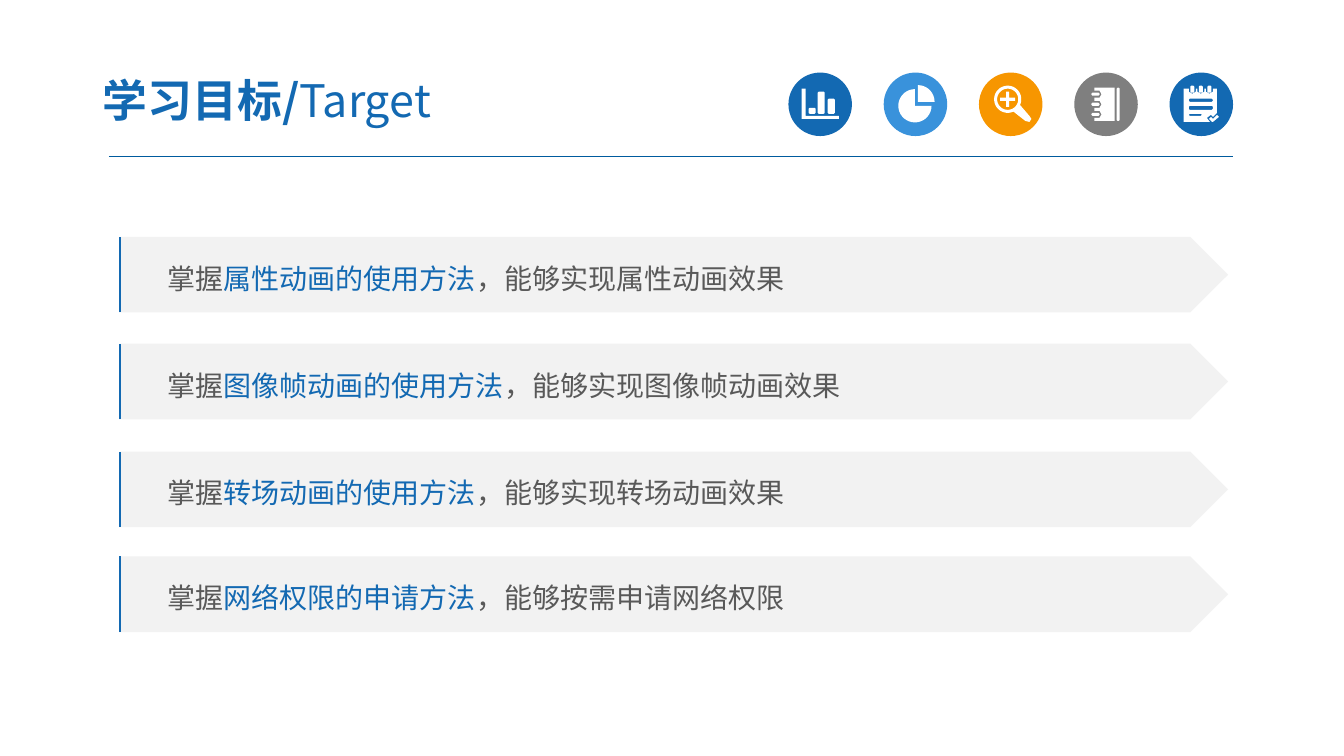
from dataclasses import dataclass
from math import cos, radians, sin

from lxml.etree import SubElement
from pptx import Presentation
from pptx.dml.color import RGBColor
from pptx.enum.shapes import MSO_CONNECTOR, MSO_SHAPE
from pptx.enum.text import MSO_ANCHOR, MSO_AUTO_SIZE, PP_ALIGN
from pptx.oxml.ns import qn
from pptx.shapes.autoshape import Shape
from pptx.slide import Slide
from pptx.util import Inches, Pt

Contour = list[tuple[float, float]]


@dataclass(frozen=True)
class Theme:
    font: str = "Noto Sans CJK SC"
    blue: str = "1369B2"
    sky: str = "3992DB"
    orange: str = "F79600"
    gray: str = "7F7F7F"
    rule: str = "005B9E"
    banner: str = "F2F2F2"
    text: str = "595959"
    white: str = "FFFFFF"
    title_size: int = 32
    goal_size: int = 20


@dataclass(frozen=True)
class Icon:
    """A disc and its white glyph; a contour inside another is a hole."""
    color: str
    glyph: list[Contour]


@dataclass(frozen=True)
class Goal:
    top: float
    topic: str
    result: str


def soft_box(left: float, top: float, width: float, height: float) -> Contour:
    """Give a rectangle with slightly cut corners."""
    cut = 0.01
    right, bottom = left + width, top + height
    return [(left + cut, top), (right - cut, top), (right, top + cut),
            (right, bottom - cut), (right - cut, bottom), (left + cut, bottom),
            (left, bottom - cut), (left, top + cut)]


def arc(x: float, y: float, radius: float, start: int, end: int) -> Contour:
    """Give points every 10 degrees, clockwise from the right."""
    return [(x + radius * cos(radians(angle)), y + radius * sin(radians(angle)))
            for angle in range(start, end + 1, 10)]


THEME = Theme()
ICON_LEFT, ICON_TOP, ICON_SIZE, ICON_STEP = 7.82, 0.72, 0.63, 0.945
BANNER_LEFT, BANNER_WIDTH, BANNER_HEIGHT = 1.19, 10.99, 0.75
STRIPE_WIDTH = 0.17

bar_chart = [
    [(0.13, 0.16), (0.17, 0.16), (0.17, 0.43), (0.50, 0.43), (0.50, 0.46), (0.13, 0.46)],
    soft_box(0.20, 0.35, 0.07, 0.06),
    soft_box(0.29, 0.19, 0.07, 0.22),
    soft_box(0.39, 0.26, 0.07, 0.15),
]
pie_chart = [
    [(0.31, 0.33)] + arc(0.31, 0.33, 0.165, 0, 270),
    [(0.34, 0.29)] + arc(0.34, 0.29, 0.165, 270, 360),
]
magnifier = [
    arc(0.285, 0.265, 0.135, 65, 385)
    + [(0.50, 0.43), (0.52, 0.46), (0.50, 0.49), (0.46, 0.48)],
    arc(0.285, 0.265, 0.105, 0, 350),
    [(0.27, 0.19), (0.30, 0.19), (0.30, 0.25), (0.36, 0.25), (0.36, 0.28), (0.30, 0.28),
     (0.30, 0.34), (0.27, 0.34), (0.27, 0.28), (0.21, 0.28), (0.21, 0.25), (0.27, 0.25)],
]

ring_tops = [0.38, 0.28, 0.18]
cover = [(0.20, 0.15), (0.40, 0.15), (0.40, 0.48), (0.20, 0.48)]
for top in ring_tops:
    cover += [(0.20, top + 0.07), (0.25, top + 0.07), (0.27, top + 0.035),
              (0.25, top), (0.20, top)]
notebook = [cover, soft_box(0.42, 0.15, 0.03, 0.33)]
notebook += [soft_box(0.17, top + 0.02, 0.08, 0.03) for top in ring_tops]

binding_lefts = [0.19, 0.275, 0.36]
sheet = [(0.14, 0.16)]
for left in binding_lefts:
    sheet += [(left, 0.16), (left, 0.19), (left + 0.035, 0.21),
              (left + 0.07, 0.19), (left + 0.07, 0.16)]
sheet += [(0.47, 0.16), (0.47, 0.40), (0.43, 0.44), (0.41, 0.42),
          (0.37, 0.45), (0.40, 0.49), (0.14, 0.49)]
tick = [(0.39, 0.46), (0.41, 0.44), (0.43, 0.46), (0.47, 0.42),
        (0.49, 0.44), (0.43, 0.49), (0.42, 0.49)]
notepad = [
    sheet, tick,
    soft_box(0.19, 0.26, 0.24, 0.03),
    soft_box(0.19, 0.33, 0.24, 0.04),
    soft_box(0.19, 0.41, 0.13, 0.02),
]
notepad += [soft_box(left + 0.015, 0.13, 0.04, 0.07) for left in binding_lefts]

ICONS = [
    Icon(THEME.blue, bar_chart),
    Icon(THEME.sky, pie_chart),
    Icon(THEME.orange, magnifier),
    Icon(THEME.gray, notebook),
    Icon(THEME.blue, notepad),
]

GOALS = [
    Goal(2.35, "属性动画的使用方法", "，能够实现属性动画效果"),
    Goal(3.41, "图像帧动画的使用方法", "，能够实现图像帧动画效果"),
    Goal(4.48, "转场动画的使用方法", "，能够实现转场动画效果"),
    Goal(5.52, "网络权限的申请方法", "，能够按需申请网络权限"),
]


def paint(shape: Shape, color: str) -> None:
    shape.shadow.inherit = False
    shape.fill.solid()
    shape.fill.fore_color.rgb = RGBColor.from_string(color)
    shape.line.fill.background()


def add_filled(page: Slide, kind: MSO_SHAPE, left: float, top: float,
               width: float, height: float, color: str) -> Shape:
    shape = page.shapes.add_shape(
        kind, Inches(left), Inches(top), Inches(width), Inches(height))
    paint(shape, color)
    return shape


def add_rule(page: Slide) -> None:
    rule = page.shapes.add_connector(
        MSO_CONNECTOR.STRAIGHT, Inches(1.08), Inches(1.55), Inches(12.23), Inches(1.55))
    rule.line.color.rgb = RGBColor.from_string(THEME.rule)
    rule.line.width = Pt(0.75)
    SubElement(rule._element.spPr, qn("a:effectLst"))


def add_span(para, text: str, size: int, color: str, bold: bool = False) -> None:
    span = para.add_run()
    span.text = text
    span.font.size = Pt(size)
    span.font.bold = bold
    span.font.name = THEME.font
    span.font.color.rgb = RGBColor.from_string(color)
    SubElement(span.font._element, qn("a:ea"), typeface=THEME.font)


def add_title(page: Slide) -> None:
    title = page.shapes.title
    title.left, title.top = Inches(0.89), Inches(0.63)
    title.width, title.height = Inches(5.22), Inches(0.72)
    frame = title.text_frame
    frame.auto_size = MSO_AUTO_SIZE.NONE
    frame.vertical_anchor = MSO_ANCHOR.MIDDLE
    frame.margin_left = frame.margin_right = Inches(0.13)
    frame.margin_top = frame.margin_bottom = Inches(0.07)
    para = frame.paragraphs[0]
    para.alignment = PP_ALIGN.LEFT
    add_span(para, "学习目标/", THEME.title_size, THEME.blue, bold=True)
    add_span(para, "Target", THEME.title_size, THEME.blue)


def add_icon(page: Slide, icon: Icon, left: float) -> None:
    add_filled(page, MSO_SHAPE.OVAL, left, ICON_TOP, ICON_SIZE, ICON_SIZE, icon.color)
    contours = [[(Inches(left + x), Inches(ICON_TOP + y)) for x, y in contour]
                for contour in icon.glyph]
    builder = page.shapes.build_freeform(*contours[0][0])
    for index, contour in enumerate(contours):
        if index:
            builder.move_to(*contour[0])
        builder.add_line_segments(contour[1:], close=True)
    paint(builder.convert_to_shape(), THEME.white)


def add_stripe(page: Slide, top: float) -> None:
    """Draw the left edge of a box that is open on its other sides."""
    left, bottom = Inches(BANNER_LEFT), Inches(top + BANNER_HEIGHT)
    builder = page.shapes.build_freeform(left, bottom)
    builder.add_line_segments([(left, Inches(top))], close=False)
    builder.move_to(Inches(BANNER_LEFT + STRIPE_WIDTH), Inches(top))
    stripe = builder.convert_to_shape()
    stripe.shadow.inherit = False
    stripe.fill.background()
    stripe.line.color.rgb = RGBColor.from_string(THEME.blue)
    stripe.line.width = Pt(1.5)


def add_goal(page: Slide, goal: Goal) -> None:
    banner = add_filled(page, MSO_SHAPE.PENTAGON, BANNER_LEFT, goal.top,
                        BANNER_WIDTH, BANNER_HEIGHT, THEME.banner)
    frame = banner.text_frame
    frame.word_wrap = True
    frame.vertical_anchor = MSO_ANCHOR.MIDDLE
    frame.margin_left = Inches(0.47)
    para = frame.paragraphs[0]
    para.alignment = PP_ALIGN.LEFT
    para.line_spacing = 1.2
    add_span(para, "掌握", THEME.goal_size, THEME.text)
    add_span(para, goal.topic, THEME.goal_size, THEME.blue)
    add_span(para, goal.result, THEME.goal_size, THEME.text)
    add_stripe(page, goal.top)


def main() -> None:
    deck = Presentation()
    deck.slide_width, deck.slide_height = Inches(13.33), Inches(7.5)
    page = deck.slides.add_slide(deck.slide_layouts.get_by_name("Title Only"))
    add_rule(page)
    for index, icon in enumerate(ICONS):
        add_icon(page, icon, ICON_LEFT + index * ICON_STEP)
    add_title(page)
    for goal in GOALS:
        add_goal(page, goal)
    deck.save("out.pptx")


if __name__ == "__main__":
    main()
